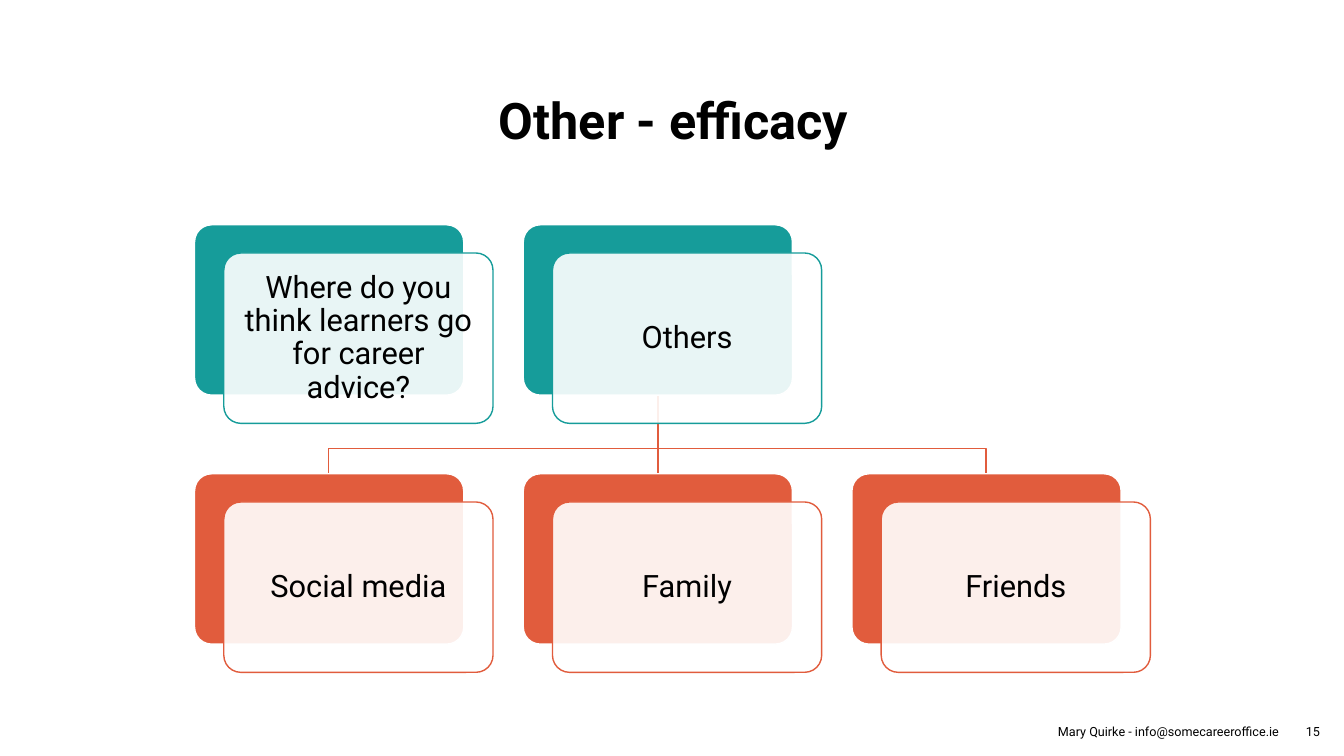
from lxml.etree import SubElement
from pptx import Presentation
from pptx.dml.color import RGBColor
from pptx.enum.shapes import MSO_CONNECTOR, MSO_SHAPE
from pptx.enum.text import MSO_ANCHOR, PP_ALIGN
from pptx.oxml.ns import qn
from pptx.util import Pt

PX = 9144  # 100 px to the inch
COLORS = {"paper": "FFFFFF", "ink": "000000", "question": "169C9A", "answer": "E15C3D"}
FONT = "Roboto"

CARD_W, CARD_H = 267, 169
COLUMN_STEP, ROW_STEP = 326, 247
FRONT_DX, FRONT_DY = 29, 28
BRANCH_DROP = 53
ROWS = [
    ("question", ["Where do you think learners go for career advice?", "Others"]),
    ("answer", ["Social media", "Family", "Friends"]),
]
PARENT = "Others"


def rgb(name):
    return RGBColor.from_string(COLORS[name])


def set_all(target, formats):
    for attribute, value in formats.items():
        setattr(target, attribute, value)


def style_line(shape, color):
    shape.line.color.rgb = rgb(color)
    shape.line.width = Pt(1)


def write(shape, text, size, align, inset=(10, 5), bold=False, paragraph_formats=None):
    frame = shape.text_frame
    side, end = (length * PX for length in inset)
    set_all(frame, {
        "word_wrap": True, "vertical_anchor": MSO_ANCHOR.MIDDLE,
        "margin_left": side, "margin_right": side,
        "margin_top": end, "margin_bottom": end,
    })
    paragraph = frame.paragraphs[0]
    set_all(paragraph, {"alignment": align, **(paragraph_formats or {})})
    run = paragraph.add_run()
    run.text = text
    set_all(run.font, {"name": FONT, "size": Pt(size), "bold": bold})
    run.font.color.rgb = rgb("ink")


def add_label(slide, box, text, size, align, **options):
    label = slide.shapes.add_textbox(*(length * PX for length in box))
    write(label, text, size, align, **options)


def add_panel(slide, left, top, fill, line):
    panel = slide.shapes.add_shape(
        MSO_SHAPE.ROUNDED_RECTANGLE, left * PX, top * PX, CARD_W * PX, CARD_H * PX)
    panel.adjustments[0] = 0.1
    panel.shadow.inherit = False
    panel.fill.solid()
    panel.fill.fore_color.rgb = rgb(fill)
    style_line(panel, line)
    return panel


def add_card(slide, left, top, color, text):
    """Draw a solid panel with a translucent text panel over it; return the solid one."""
    back = add_panel(slide, left, top, color, "paper")
    front = add_panel(slide, left + FRONT_DX, top + FRONT_DY, "paper", color)
    fill_color = front.fill._xPr.find(qn("a:solidFill"))[0]
    SubElement(fill_color, qn("a:alpha"), val="90000")
    write(front, text, 22, PP_ALIGN.CENTER, inset=(14, 14),
          paragraph_formats={"line_spacing": 0.9})
    return back


def add_branch(slide, start_x, start_y, end_x, end_y):
    """Draw an elbow line from the parent card down to a child card."""
    bend_y = start_y + BRANCH_DROP
    builder = slide.shapes.build_freeform(start_x, start_y, scale=PX)
    builder.add_line_segments(
        [(start_x, bend_y), (end_x, bend_y), (end_x, end_y)], close=False)
    branch = builder.convert_to_shape()
    branch.shadow.inherit = False
    branch.fill.background()
    style_line(branch, "answer")


def add_hierarchy(slide, left, top):
    parent_column = ROWS[0][1].index(PARENT)
    parent_x = left + parent_column * COLUMN_STEP + CARD_W // 2
    parent_bottom, child_top = top + CARD_H, top + ROW_STEP

    for side in (1, -1):
        add_branch(slide, parent_x, parent_bottom, parent_x + side * COLUMN_STEP, child_top)
    stem = slide.shapes.add_connector(
        MSO_CONNECTOR.STRAIGHT, parent_x * PX, parent_bottom * PX,
        parent_x * PX, child_top * PX)
    style_line(stem, "answer")
    SubElement(stem._element.spPr, qn("a:effectLst"))

    cards = [
        [add_card(slide, left + column * COLUMN_STEP, top + row * ROW_STEP, color, text)
         for column, text in enumerate(texts)]
        for row, (color, texts) in enumerate(ROWS)
    ]
    stem.begin_connect(cards[0][parent_column], 2)
    stem.end_connect(cards[1][parent_column], 0)


def add_footer(slide, left, top, width, height):
    number_w, gap = 47, -6
    credit_w = width - number_w - gap
    add_label(slide, (left, top, credit_w, height),
              "Mary Quirke - info@somecareeroffice.ie", 9, PP_ALIGN.RIGHT)
    add_label(slide, (left + width - number_w, top, number_w, height),
              "15", 9, PP_ALIGN.RIGHT, paragraph_formats={"space_after": Pt(6)})


def main():
    deck = Presentation()
    set_all(deck, {"slide_width": 1333 * PX, "slide_height": 750 * PX})
    slide = deck.slides.add_slide(deck.slide_layouts[6])
    add_label(slide, (167, 60, 1002, 124), "Other - efficacy", 36, PP_ALIGN.CENTER,
              bold=True, paragraph_formats={"line_spacing": 0.9})
    add_hierarchy(slide, 193, 223)
    add_footer(slide, 971, 706, 348, 40)
    deck.save("out.pptx")


if __name__ == "__main__":
    main()
